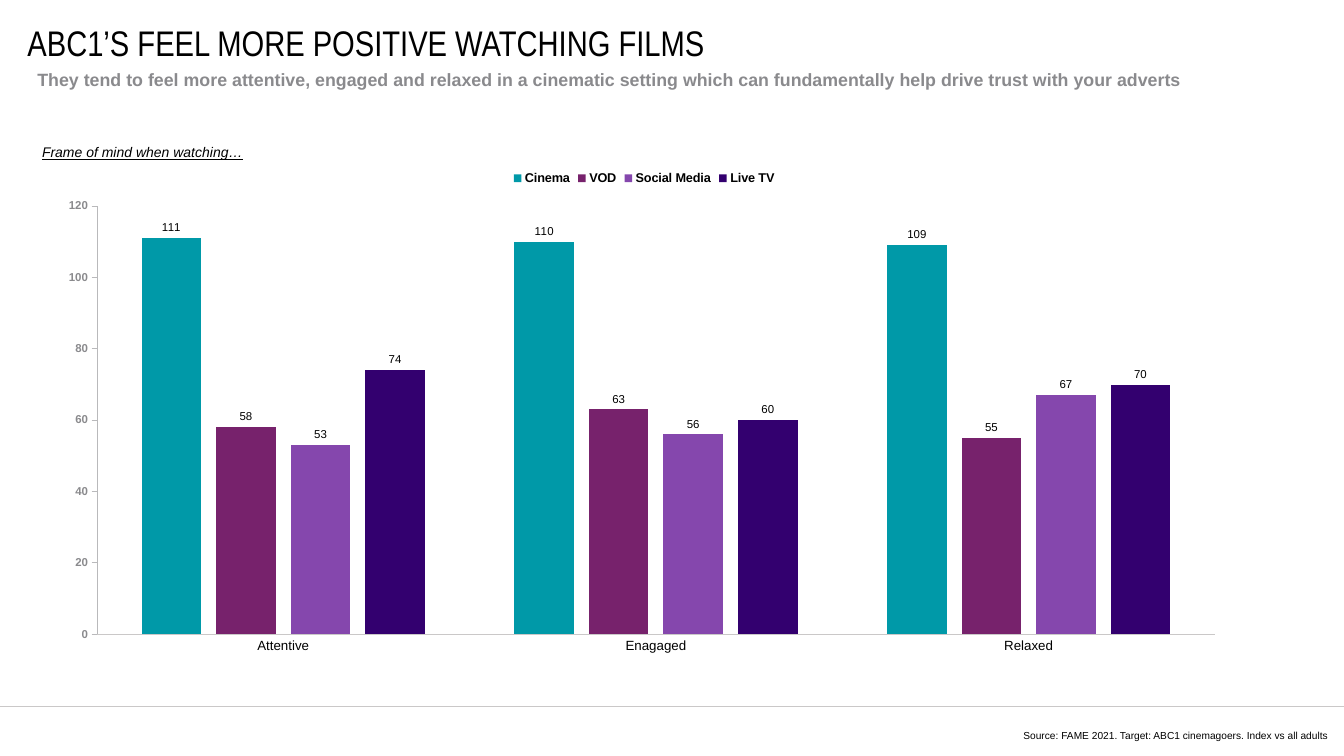
import pptx
import pptx.chart.data
import pptx.dml.color
import pptx.enum.chart
import pptx.enum.shapes
import pptx.enum.text
import pptx.oxml
import pptx.oxml.ns
import pptx.util
from pptx.util import Inches

BLACK = "000000"
GREY = "8A8A8D"
RULE = "CAC8C8"
MOODS = ["Attentive", "Enagaged", "Relaxed"]
MEDIA = [
    ("Cinema", [111, 110, 109], "0099A8"),
    ("VOD", [58, 63, 55], "77226C"),
    ("Social Media", [53, 56, 67], "8547AD"),
    ("Live TV", [74, 60, 70], "33006F"),
]


def color(value):
    return pptx.dml.color.RGBColor.from_string(value)


def style_font(font, size, value=BLACK, name="Arial", bold=False):
    font.size = pptx.util.Pt(size)
    font.name = name
    font.bold = bold
    font.color.rgb = color(value)


def style_line(line, value, width):
    line.color.rgb = color(value)
    line.width = pptx.util.Pt(width)


def add_text(page, text, left, top, width, height, size, value=BLACK,
             name="Arial", bold=False, margins=(0, 0), middle=False, spacing=None):
    box = page.shapes.add_textbox(Inches(left), Inches(top), Inches(width), Inches(height))
    frame = box.text_frame
    frame.word_wrap = True
    frame.margin_left = frame.margin_right = Inches(margins[0])
    frame.margin_top = frame.margin_bottom = Inches(margins[1])
    if middle:
        frame.vertical_anchor = pptx.enum.text.MSO_ANCHOR.MIDDLE
    frame.text = text
    para = frame.paragraphs[0]
    if spacing:
        para.line_spacing = pptx.util.Pt(spacing)
    style_font(para.runs[0].font, size, value, name, bold)
    return para


def add_rule(page, top, width):
    rule = page.shapes.add_connector(
        pptx.enum.shapes.MSO_CONNECTOR.STRAIGHT, 0, Inches(top), Inches(width), Inches(top))
    style_line(rule.line, RULE, 0.5)
    rule._element.spPr.append(pptx.oxml.parse_xml(
        f'<a:effectLst {pptx.oxml.ns.nsdecls("a")}/>'))


def place_plot(chart, left, top, width, height):
    plot_area = chart.element.find(".//" + pptx.oxml.ns.qn("c:plotArea"))
    for layout in plot_area.findall(pptx.oxml.ns.qn("c:layout")):
        plot_area.remove(layout)
    plot_area.insert(0, pptx.oxml.parse_xml(
        f'<c:layout {pptx.oxml.ns.nsdecls("c")}><c:manualLayout>'
        '<c:layoutTarget val="inner"/><c:xMode val="edge"/><c:yMode val="edge"/>'
        f'<c:x val="{left}"/><c:y val="{top}"/><c:w val="{width}"/><c:h val="{height}"/>'
        '</c:manualLayout></c:layout>'))


def style_axes(chart):
    moods = chart.category_axis
    moods.major_tick_mark = pptx.enum.chart.XL_TICK_MARK.NONE
    style_font(moods.tick_labels.font, 10.5)
    style_line(moods.format.line, RULE, 0.75)
    scale = chart.value_axis
    scale.has_major_gridlines = False
    scale.minimum_scale, scale.maximum_scale, scale.major_unit = 0, 120, 20
    scale.major_tick_mark = pptx.enum.chart.XL_TICK_MARK.OUTSIDE
    scale.tick_labels.number_format = "0"
    scale.tick_labels.number_format_is_linked = False
    style_font(scale.tick_labels.font, 9, GREY, bold=True)
    style_line(scale.format.line, "B9B9BB", 0.75)


def style_series(series, value):
    series.format.fill.solid()
    series.format.fill.fore_color.rgb = color(value)
    series.invert_if_negative = False
    labels = series.data_labels
    labels.show_value = True
    labels.number_format = "0"
    labels.number_format_is_linked = False
    labels.position = pptx.enum.chart.XL_LABEL_POSITION.OUTSIDE_END
    style_font(labels.font, 9)


def add_mood_chart(page):
    data = pptx.chart.data.CategoryChartData(number_format="0")
    data.categories = MOODS
    for name, values, _ in MEDIA:
        data.add_series(name, values)
    chart = page.shapes.add_chart(
        pptx.enum.chart.XL_CHART_TYPE.COLUMN_CLUSTERED,
        Inches(0.54), Inches(1.76), Inches(13.01), Inches(5.51), data).chart
    style_font(chart.font, 10)
    chart.has_title = False
    chart.has_legend = True
    chart.legend.position = pptx.enum.chart.XL_LEGEND_POSITION.TOP
    chart.legend.include_in_layout = False
    style_font(chart.legend.font, 10, bold=True)
    plot = chart.plots[0]
    plot.gap_width = 150
    plot.overlap = -25
    plot.vary_by_categories = False
    for series, (_, _, value) in zip(plot.series, MEDIA):
        style_series(series, value)
    style_axes(chart)
    place_plot(chart, 0.04, 0.09, 0.94, 0.85)


def main():
    deck = pptx.Presentation()
    deck.slide_width, deck.slide_height = Inches(14.7), Inches(8.27)
    page = deck.slides.add_slide(deck.slide_layouts[6])
    add_rule(page, 7.73, 14.7)
    add_text(page, "ABC1’S FEEL MORE POSITIVE WATCHING FILMS",
             0.3, 0.3, 13.58, 0.32, 28, name="Arial Narrow", middle=True)
    add_text(page, "They tend to feel more attentive, engaged and relaxed in a cinematic setting "
             "which can fundamentally help drive trust with your adverts",
             0.31, 0.73, 13.82, 0.48, 14, GREY, bold=True, margins=(0.1, 0.05), spacing=15)
    source = add_text(page, "Source: FAME 2021. Target: ABC1 cinemagoers. Index vs all adults",
                      7.35, 7.87, 7.18, 0.23, 8, middle=True, spacing=19)
    source.alignment = pptx.enum.text.PP_ALIGN.RIGHT
    add_mood_chart(page)
    heading = add_text(page, "Frame of mind when watching…", 0.46, 1.57, 6.06, 0.19, 11)
    heading.runs[0].font.italic = True
    heading.runs[0].font.underline = True
    deck.save("out.pptx")


if __name__ == "__main__":
    main()
